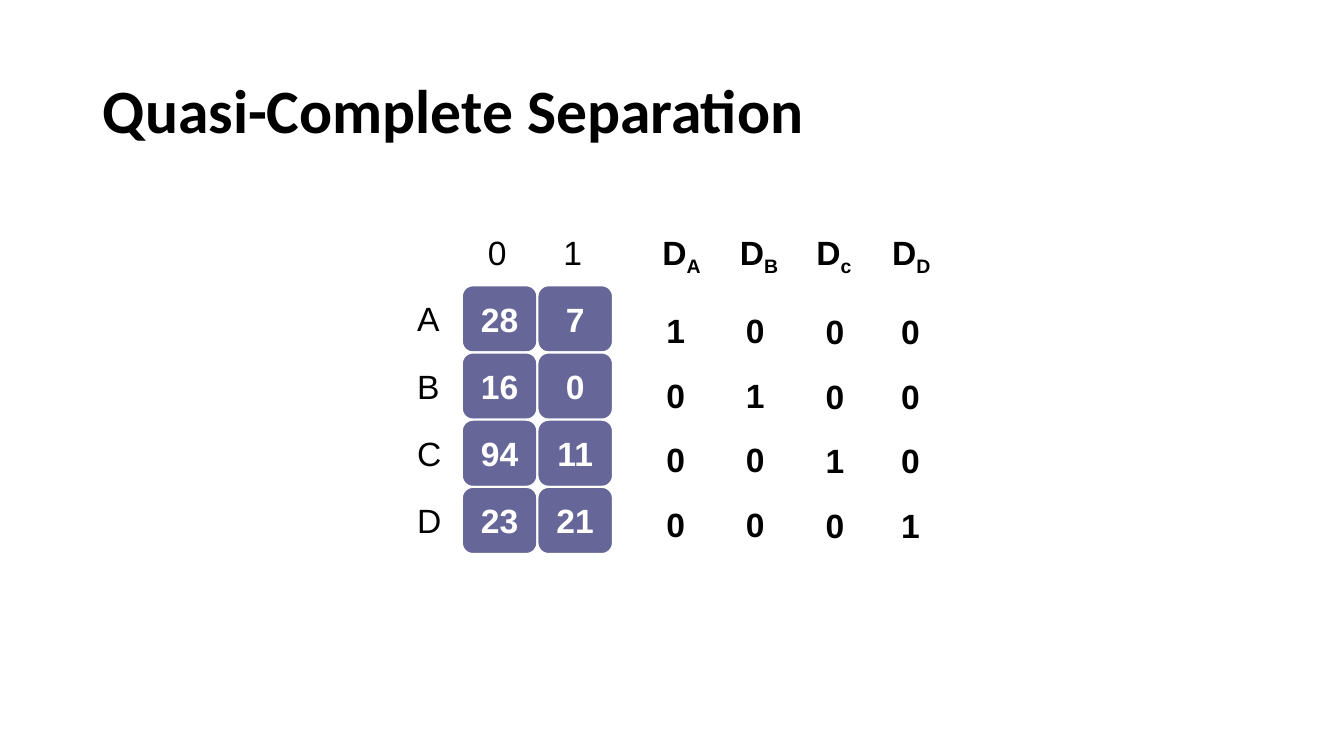
import pptx
import pptx.util
import pptx.dml.color
import pptx.enum.shapes
import pptx.enum.text
from pptx.util import Inches, Pt

TITLE = "Quasi-Complete Separation"
OUTCOMES = ["0", "1"]
COUNTS = [("A", 28, 7), ("B", 16, 0), ("C", 94, 11), ("D", 23, 21)]
DUMMIES = [
    ("A", 6.47, 0.61, 6.51, 2.79),
    ("B", 7.24, 0.61, 7.3, 2.79),
    ("c", 8.0, 0.57, 8.09, 2.8),
    ("D", 8.75, 0.61, 8.84, 2.8),
]

BLACK = pptx.dml.color.RGBColor(0x00, 0x00, 0x00)
WHITE = pptx.dml.color.RGBColor(0xFF, 0xFF, 0xFF)
PURPLE = pptx.dml.color.RGBColor(0x66, 0x66, 0x99)

GRID_LEFT, GRID_TOP = 4.58, 2.83
CELL_W, CELL_H = 0.75, 2 / 3
HEADER_TOP, LABEL_LEFT = 2.25, 4.04
DIGIT_W, LABEL_W, LINE_H = 0.39, 0.44, 0.5


def style(p, color=BLACK, bold=False, size=24, name="Arial"):
    """Set the font of a paragraph."""
    p.font.name = name
    p.font.size = Pt(size)
    p.font.bold = bold
    p.font.color.rgb = color


def add_text(s, lines, left, top, width, height=LINE_H, bold=False, spacing=None):
    """Add an unwrapped text box with one paragraph per line."""
    tb = s.shapes.add_textbox(Inches(left), Inches(top), Inches(width), Inches(height))
    tf = tb.text_frame
    tf.word_wrap = False
    tf.auto_size = pptx.enum.text.MSO_AUTO_SIZE.SHAPE_TO_FIT_TEXT
    tf.text = "\n".join(lines)
    for p in tf.paragraphs:
        style(p, bold=bold)
        if spacing:
            p.line_spacing = spacing
    return tf


def add_count(s, count, row, col):
    """Add one rounded cell of the frequency grid."""
    sp = s.shapes.add_shape(
        pptx.enum.shapes.MSO_SHAPE.ROUNDED_RECTANGLE,
        Inches(GRID_LEFT + col * CELL_W), Inches(GRID_TOP + row * CELL_H),
        Inches(CELL_W), Inches(CELL_H))
    sp.shadow.inherit = False
    sp.fill.solid()
    sp.fill.fore_color.rgb = PURPLE
    sp.line.color.rgb = WHITE
    sp.line.width = Pt(1.5)
    tf = sp.text_frame
    tf.word_wrap = False
    tf.vertical_anchor = pptx.enum.text.MSO_ANCHOR.MIDDLE
    p = tf.paragraphs[0]
    p.text = str(count)
    p.alignment = pptx.enum.text.PP_ALIGN.CENTER
    style(p, WHITE, True)


def main():
    """Build the slide and save it."""
    prs = pptx.Presentation()
    prs.slide_width, prs.slide_height = Inches(13.33), Inches(7.5)
    s = prs.slides.add_slide(prs.slide_layouts[5])

    title = s.shapes.title
    title.left, title.top = Inches(0.92), Inches(0.4)
    title.width, title.height = Inches(11.5), Inches(1.45)
    title.text_frame.text = TITLE
    title.text_frame.vertical_anchor = pptx.enum.text.MSO_ANCHOR.MIDDLE
    p = title.text_frame.paragraphs[0]
    p.alignment = pptx.enum.text.PP_ALIGN.LEFT
    p.line_spacing = 0.9
    style(p, bold=True, size=44, name="Calibri")

    for col, outcome in enumerate(OUTCOMES):
        add_text(s, [outcome], 4.74 + col * CELL_W, HEADER_TOP, DIGIT_W)

    for row, (label, *counts) in enumerate(COUNTS):
        add_text(s, [label], LABEL_LEFT, GRID_TOP + 0.08 + row * CELL_H, LABEL_W)
        for col, count in enumerate(counts):
            add_count(s, count, row, col)

    for i, (sub, head_left, head_w, left, top) in enumerate(DUMMIES):
        tf = add_text(s, ["D"], head_left, HEADER_TOP, head_w, bold=True)
        r = tf.paragraphs[0].add_run()
        r.text = sub
        r.font._element.set("baseline", "-25000")
        digits = ["1" if row == i else "0" for row in range(len(COUNTS))]
        add_text(s, digits, left, top, DIGIT_W, 2.69, True, 1.6)

    prs.save("out.pptx")


if __name__ == "__main__":
    main()
